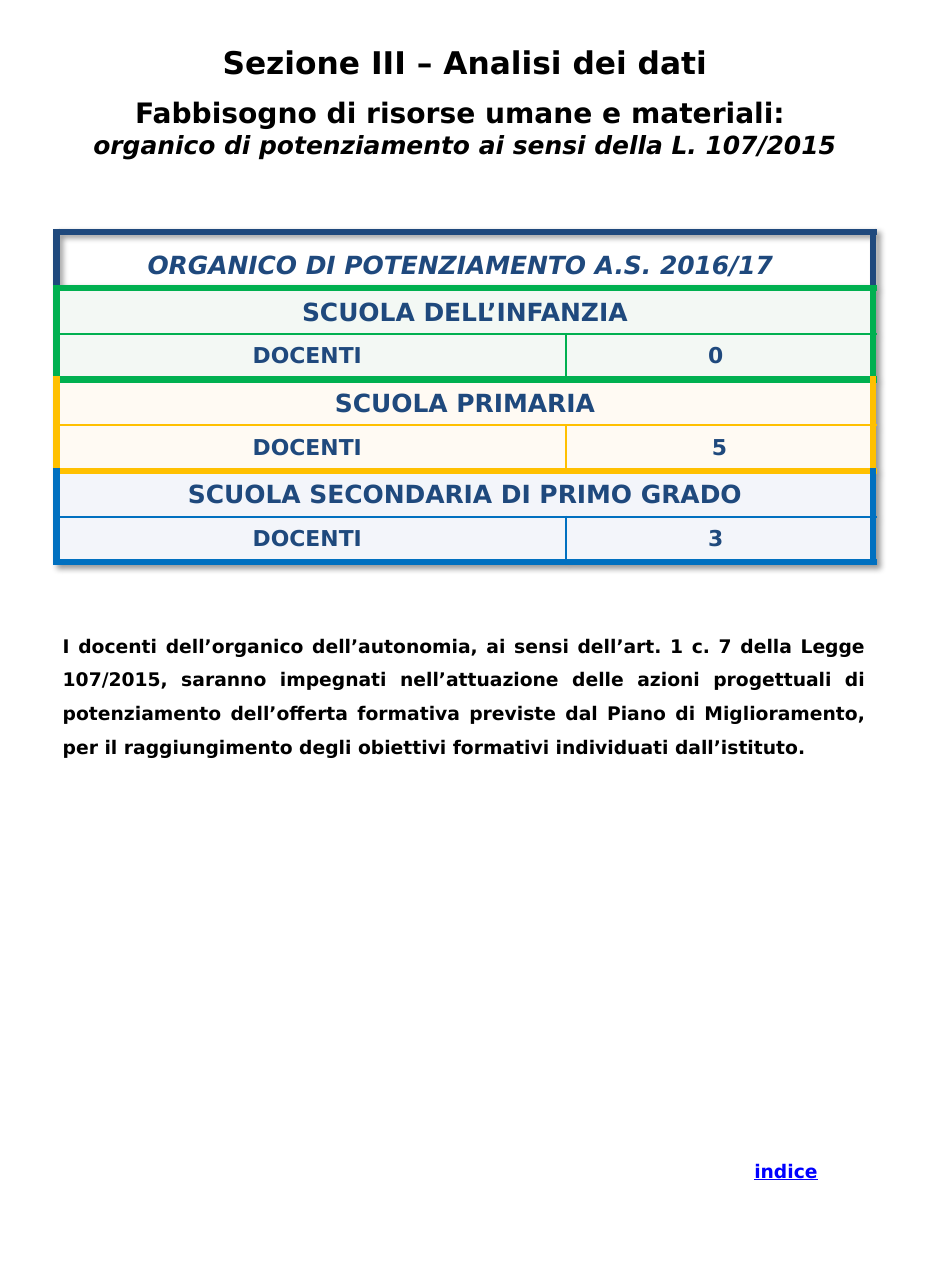
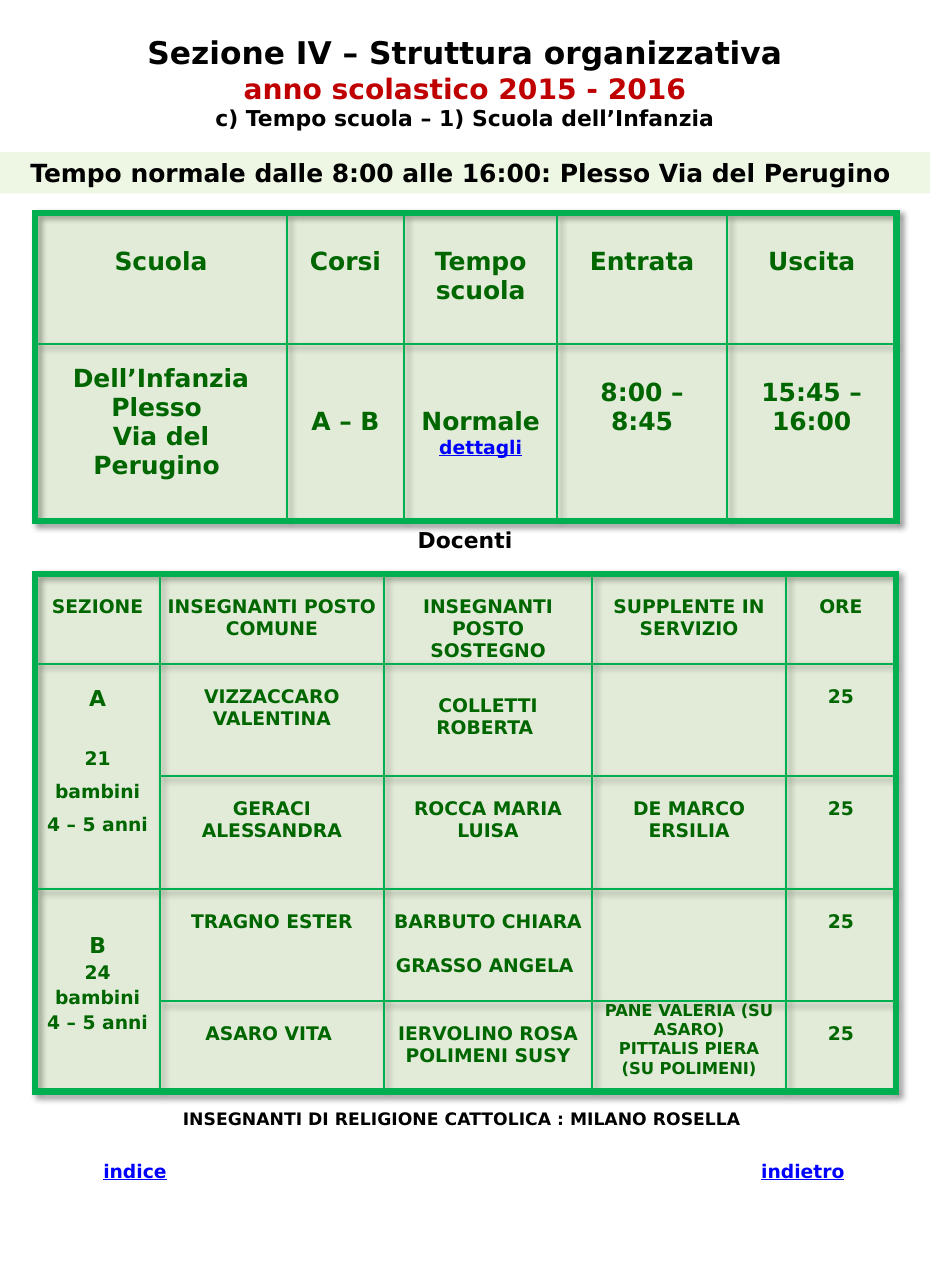
from collections import namedtuple
from lxml.etree import SubElement
from pptx import Presentation
from pptx.dml.color import RGBColor
from pptx.enum.shapes import MSO_SHAPE
from pptx.enum.text import MSO_ANCHOR, MSO_AUTO_SIZE, PP_ALIGN
from pptx.oxml import parse_xml
from pptx.oxml.ns import nsdecls, qn
from pptx.util import Pt

FONT = "DejaVu Sans"
WIDTH, HEIGHT = 595.4, 824.4
THICK, THIN = 4.5, 1.5
BLACK = RGBColor(0, 0, 0)
RED = RGBColor(0xC0, 0, 0)
LINK = RGBColor(0, 0, 0xFF)
NAVY = RGBColor(0x1F, 0x49, 0x7D)
GREEN = RGBColor(0, 0xB0, 0x50)
GOLD = RGBColor(0xFF, 0xC0, 0)
BLUE = RGBColor(0, 0x70, 0xC0)
MINT = RGBColor(0xF3, 0xF8, 0xF4)
CREAM = RGBColor(0xFF, 0xFA, 0xF3)
ICE = RGBColor(0xF3, 0xF5, 0xFA)
LIME = RGBColor(0x92, 0xD0, 0x50)
FOREST = RGBColor(0, 0x66, 0)
PLAIN_GRID = "{2D5ABB26-0587-4C30-8999-92F81FD0307C}"
SHADOW = (
    f'<a:effectLst {nsdecls("a")}><a:outerShdw blurRad="50800" dist="38100" '
    'dir="2700000" algn="tl" rotWithShape="0"><a:prstClr val="black">'
    '<a:alpha val="40000"/></a:prstClr></a:outerShdw></a:effectLst>'
)

Band = namedtuple("Band", "rows line fill top alpha", defaults=[None])
Cell = namedtuple("Cell", "top lines")


def cell(top, *lines):
    """Return a cell whose text starts at the given inset."""
    return Cell(top, lines)


class Deck:
    """Hold the style and the current slide."""

    def __init__(self):
        """Open an empty portrait deck."""
        self.file = Presentation()
        self.file.slide_width, self.file.slide_height = Pt(WIDTH), Pt(HEIGHT)
        self.slide = None

    def page(self):
        """Start a blank slide."""
        self.slide = self.file.slides.add_slide(self.file.slide_layouts[6])

    def fill_text(self, frame, lines, **base):
        """Set lines, each a text or a text with its own format."""
        for place, line in enumerate(lines):
            text, own = (line, {}) if isinstance(line, str) else line
            look = {"size": 12, "color": BLACK, "bold": True,
                    "alignment": PP_ALIGN.CENTER, **base, **own}
            para = frame.paragraphs[0] if place == 0 else frame.add_paragraph()
            run = para.add_run()
            run.text = text
            run.font.name = FONT
            run.font.color.rgb = look.pop("color")
            for key, value in look.items():
                target = para if hasattr(para, key) else run.font
                setattr(target, key, Pt(value) if key in ("size", "space_before") else value)

    def text(self, x, y, w, h, *lines, **base):
        """Add a text box that grows with its text."""
        frame = self.slide.shapes.add_textbox(Pt(x), Pt(y), Pt(w), Pt(h)).text_frame
        frame.word_wrap = True
        frame.auto_size = MSO_AUTO_SIZE.SHAPE_TO_FIT_TEXT
        self.fill_text(frame, lines, **base)

    def link(self, x, text):
        """Add a footer entry styled as a link."""
        self.text(x, 738.6, 118, 21.8, text, color=LINK, underline=True)

    def paint(self, fill, color, alpha=None):
        """Set a solid fill, with a share of opacity if given."""
        if color is None:
            fill.background()
            return
        fill.solid()
        fill.fore_color.rgb = color
        if alpha:
            tint = fill._xPr.find(qn("a:solidFill"))[0]
            SubElement(tint, qn("a:alpha"), val=str(alpha * 1000))

    def strip(self, y, h, text, size):
        """Add a tinted heading strip across the slide."""
        shape = self.slide.shapes.add_shape(
            MSO_SHAPE.RECTANGLE, 0, Pt(y), Pt(WIDTH), Pt(h))
        shape.shadow.inherit = False
        shape.line.fill.background()
        self.paint(shape.fill, LIME, 15)
        shape.text_frame.word_wrap = True
        shape.text_frame.vertical_anchor = MSO_ANCHOR.MIDDLE
        self.fill_text(shape.text_frame, [text], size=size)

    def edge(self, box, side, color, width):
        """Draw one border of a table cell."""
        line = SubElement(box._tc.get_or_add_tcPr(), qn("a:ln" + side), w=str(Pt(width)))
        SubElement(SubElement(line, qn("a:solidFill")), qn("a:srgbClr"), val=str(color))

    def table(self, x, y, cols, rows, cells, bands, spans, pad=(7.2, 3.6), **base):
        """Add a table framed band by band."""
        grid = self.slide.shapes.add_table(
            len(rows), len(cols), Pt(x), Pt(y), Pt(sum(cols)), Pt(sum(rows))).table
        grid.first_row = grid.horz_banding = False
        style = grid._tbl.tblPr
        style.find(qn("a:tableStyleId")).text = PLAIN_GRID
        style.insert(0, parse_xml(SHADOW))
        for col, width in zip(grid.columns, cols):
            col.width = Pt(width)
        for row, height in zip(grid.rows, rows):
            row.height = Pt(height)
        for r, c, down, right in spans:
            grid.cell(r, c).merge(grid.cell(r + down - 1, c + right - 1))
        start = 0
        for band, after in zip(bands, bands[1:] + [None]):
            end = start + band.rows
            low = after.top if after else band.line
            for r in range(start, end):
                for c in range(len(cols)):
                    box = grid.cell(r, c)
                    last = r + box.span_height == end
                    sides = {
                        "L": (band.line, c == 0),
                        "R": (band.line, c + box.span_width == len(cols)),
                        "T": (band.top if r == start else band.line, r == start),
                        "B": (low if last else band.line, last),
                    }
                    shown = "LRTB"
                    if box.is_spanned:
                        shown = "LRB" if c == 0 else "RB"
                    for side in shown:
                        color, outer = sides[side]
                        self.edge(box, side, color, THICK if outer else THIN)
                    self.paint(box.fill, band.fill, band.alpha)
                    box.margin_left = box.margin_right = Pt(pad[0])
                    box.margin_top = box.margin_bottom = Pt(pad[1])
                    item = cells[r][c] if c < len(cells[r]) else None
                    if item:
                        box.margin_top = Pt(item.top)
                        self.fill_text(box.text_frame, item.lines, **base)
            start = end


def needs(deck):
    """Build the slide on extra staff."""
    deck.page()
    deck.text(0, 23.8, WIDTH, 31.5, "Sezione III – Analisi dei dati", size=20)
    deck.text(0, 57.6, WIDTH, 48, "Fabbisogno di risorse umane e materiali: ",
              ("organico di potenziamento ai sensi della L. 107/2015",
               {"size": 16, "italic": True}), size=18)
    deck.text(33.1, 395.3, 528.5, 94.3,
              "I docenti dell’organico dell’autonomia, ai sensi dell’art. 1 c. 7 della "
              "Legge 107/2015, saranno impegnati nell’attuazione delle azioni progettuali "
              "di potenziamento dell’offerta formativa previste dal Piano di Miglioramento, "
              "per il raggiungimento degli obiettivi formativi individuati dall’istituto.",
              alignment=PP_ALIGN.JUSTIFY, line_spacing=1.5)
    deck.link(444.2, "indice")
    cells = [[cell(3.6, ("ORGANICO DI POTENZIAMENTO A.S. 2016/17 ",
                         {"italic": True, "line_spacing": 1.5}))]]
    schools = [("SCUOLA DELL’INFANZIA", "0 "), ("SCUOLA PRIMARIA", "5"),
               ("SCUOLA SECONDARIA DI PRIMO GRADO", "3 ")]
    for school, count in schools:
        cells.append([cell(3.6, school)])
        cells.append([cell(3.6, (text, {"size": 14})) for text in ("DOCENTI ", count)])
    bands = [Band(1, NAVY, None, NAVY), Band(2, GREEN, MINT, GREEN),
             Band(2, GOLD, CREAM, GREEN), Band(2, BLUE, ICE, GOLD)]
    deck.table(36.2, 148.4, [326, 197], [35.9] + [29.25] * 6, cells, bands,
               [(r, 0, 1, 2) for r in (0, 1, 3, 5)],
               size=16, color=NAVY, line_spacing=1.15)


def hours(deck):
    """Build the slide on school hours and teachers."""
    deck.page()
    deck.text(0, 18, WIDTH, 87, "Sezione IV – Struttura organizzativa",
              ("anno scolastico 2015 - 2016", {"size": 18, "color": RED}),
              ("c) Tempo scuola – 1) Scuola dell’Infanzia", {"size": 14}), size=20)
    deck.strip(97.2, 26.6, "Tempo normale dalle 8:00 alle 16:00: Plesso Via del Perugino ", 16)
    deck.text(0, 706.2, WIDTH, 20, "INSEGNANTI DI RELIGIONE CATTOLICA : MILANO ROSELLA ", size=11)
    heads = ["Scuola", "Corsi", "Tempo scuola", "Entrata", "Uscita"]
    times = [
        [cell(22.2, text) for text in heads],
        [cell(12.9, "Dell’Infanzia", "Plesso ", "Via del Perugino "),
         cell(40.8, "A – B"),
         cell(40.8, "Normale",
              ("dettagli", {"size": 12, "color": LINK, "underline": True})),
         cell(22.2, "8:00 – 8:45"), cell(22.2, "15:45 – 16:00")],
    ]
    deck.table(22.6, 136.3, [161, 75.2, 98, 108.6, 108.6], [84, 113], times,
               [Band(2, GREEN, LIME, GREEN, 15)], [], size=16, color=FOREST)
    heads = ["SEZIONE", "INSEGNANTI POSTO COMUNE", "INSEGNANTI POSTO SOSTEGNO",
             "SUPPLENTE IN SERVIZIO", "ORE"]
    wide, loose = {"line_spacing": 1.5}, {"line_spacing": 1.15}
    count = cell(14, "25")
    staff = [
        [cell(14, text) for text in heads],
        [cell(14, ("A", {"size": 14}), ("21 bambini", {**wide, "space_before": 16.3}),
              ("4 – 5 anni", wide)),
         cell(14, "VIZZACCARO VALENTINA"), cell(19.8, "COLLETTI ROBERTA "), None, count],
        [None, cell(14, "GERACI ALESSANDRA"), cell(14, "ROCCA MARIA LUISA"),
         cell(14, "DE MARCO ERSILIA"), count],
        [cell(28, ("B", {"size": 14}), ("24", loose), ("bambini", loose),
              ("4 – 5 anni", loose)),
         cell(14, "TRAGNO ESTER"),
         cell(14, "BARBUTO CHIARA", ("GRASSO ANGELA ", {"space_before": 14})), None, count],
        [None, cell(14, "ASARO VITA "), cell(14, "IERVOLINO ROSA", "POLIMENI SUSY"),
         cell(0, ("PANE VALERIA (SU ASARO)", {"size": 10.5}),
              ("PITTALIS PIERA (SU POLIMENI)", {"size": 10.5})), count],
    ]
    deck.table(22.6, 367.4, [79.8, 143.4, 133.4, 124, 70.4], [57.6, 72, 72, 72, 57.6],
               staff, [Band(5, GREEN, LIME, GREEN, 15)], [(1, 0, 2, 1), (3, 0, 2, 1)],
               pad=(5, 0), color=FOREST)
    deck.link(27.4, "indice")
    deck.link(455, "indietro")
    deck.text(29.5, 333.4, 536.4, 24.2, "Docenti", size=14)


def main():
    """Build and save the deck."""
    deck = Deck()
    needs(deck)
    hours(deck)
    deck.file.save("out.pptx")


if __name__ == "__main__":
    main()
